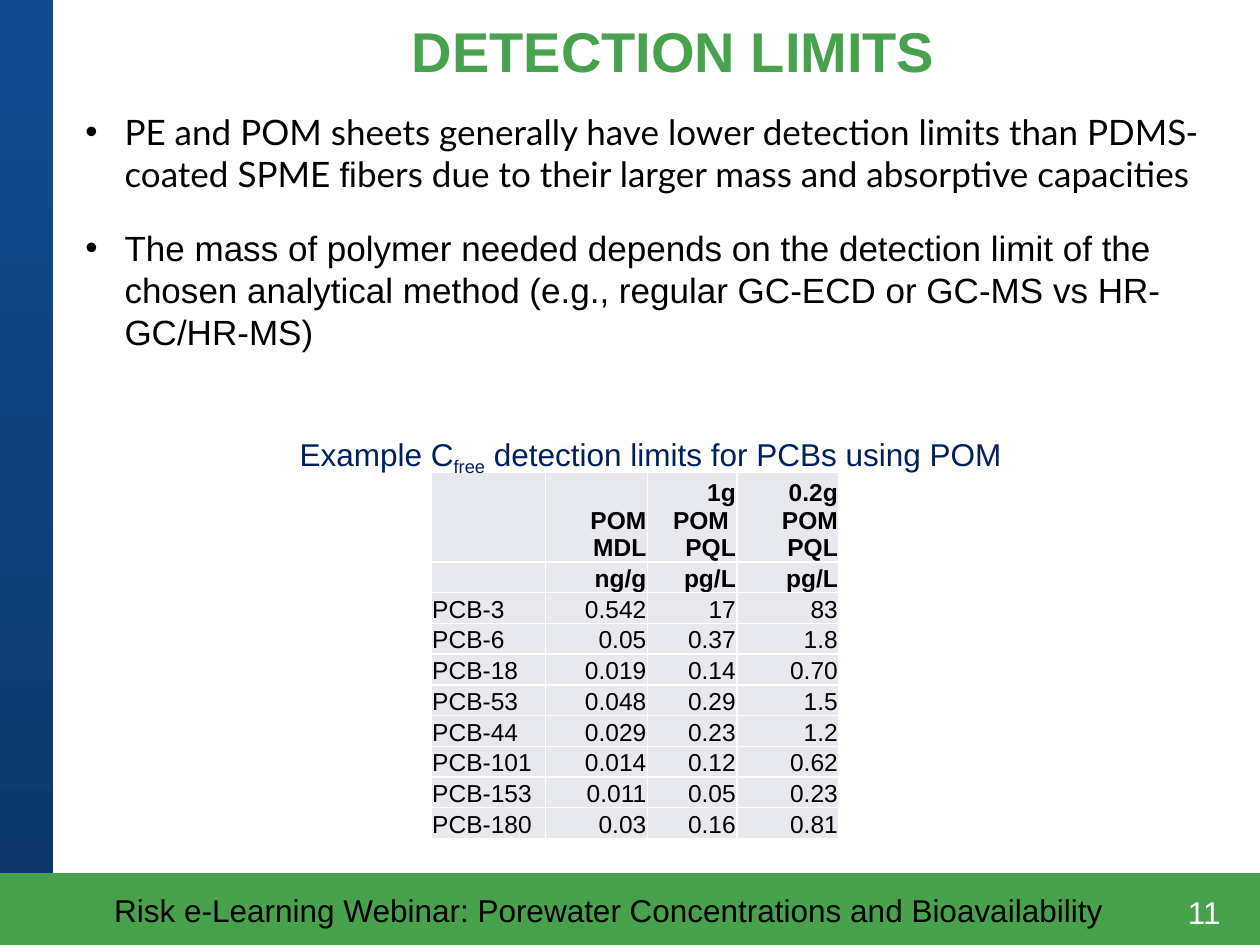
from dataclasses import dataclass

from lxml import etree
from pptx import Presentation
from pptx.dml.color import RGBColor
from pptx.enum.shapes import MSO_SHAPE
from pptx.enum.text import MSO_ANCHOR, PP_ALIGN
from pptx.oxml import parse_xml
from pptx.oxml.ns import nsdecls, qn
from pptx.util import Inches, Pt

RECT = MSO_SHAPE.RECTANGLE
LEFT, MID, RIGHT = PP_ALIGN.LEFT, PP_ALIGN.CENTER, PP_ALIGN.RIGHT
BOTTOM = MSO_ANCHOR.BOTTOM


@dataclass(frozen=True)
class Theme:
    green: str = "47A24B"
    top: str = "114B8E"
    base: str = "0D386A"
    navy: str = "002060"
    ink: str = "000000"
    white: str = "FFFFFF"
    cell: str = "E7E9EE"
    face: str = "Arial"
    title: int = 32
    body: int = 20
    label: int = 18
    grid: int = 14


class Deck:
    def __init__(self, theme, slide):
        self.theme, self.slide = theme, slide

    def bar(self, box, *hues):
        shape = self.slide.shapes.add_shape(RECT, *map(Inches, box))
        shape.shadow.inherit = False
        shape.line.fill.background()
        if len(hues) == 1:
            shape.fill.solid()
            shape.fill.fore_color.rgb = RGBColor.from_string(hues[0])
            return
        shape.fill.gradient()
        shape.fill.gradient_angle = 270
        for place, (stop, hue) in enumerate(zip(shape.fill.gradient_stops, hues)):
            stop.position = place
            stop.color.rgb = RGBColor.from_string(hue)

    def fill_para(self, para, runs, size, hue, bold=False):
        """Add runs; each is a text or a (text, format) pair."""
        for item in runs:
            text, extra = (item, {}) if isinstance(item, str) else item
            run = para.add_run()
            run.text = text
            look = {"name": self.theme.face, "size": Pt(size), "bold": bold}
            look.update(extra)
            shift = look.pop("shift", None)
            for key, value in look.items():
                setattr(run.font, key, value)
            run.font.color.rgb = RGBColor.from_string(hue)
            if shift:
                run._r.get_or_add_rPr().set("baseline", str(shift))

    def text(self, box, paras, size, hue, bold=False, align=LEFT, wrap=True,
             bullet=False, gap=0):
        frame = self.slide.shapes.add_textbox(*map(Inches, box)).text_frame
        frame.word_wrap = wrap
        for i, runs in enumerate(paras):
            para = frame.add_paragraph() if i else frame.paragraphs[0]
            para.alignment = align
            if i < len(paras) - 1:
                para.space_after = Pt(gap)
            if bullet:
                self.bullet(para)
            self.fill_para(para, runs, size, hue, bold)

    def bullet(self, para):
        props = para._p.get_or_add_pPr()
        props.set("marL", str(Inches(0.31)))
        props.set("indent", str(-Inches(0.31)))
        for tag, key, value in (("a:buFont", "typeface", self.theme.face),
                                ("a:buChar", "char", "•")):
            etree.SubElement(props, qn(tag)).set(key, value)

    def table(self, box, rows, widths, heights, heads):
        shape = self.slide.shapes.add_table(len(rows), len(widths), *map(Inches, box))
        table = shape.table
        for col, width in zip(table.columns, widths):
            col.width = Inches(width)
        for row, height in zip(table.rows, heights):
            row.height = Inches(height)
        for r, row in enumerate(rows):
            for c, text in enumerate(row):
                self.cell(table.cell(r, c), text, RIGHT if c else LEFT, r < heads)

    def cell(self, cell, text, align, bold):
        edge = Inches(0.01)
        look = {"margin_left": edge, "margin_right": edge, "margin_top": edge,
                "margin_bottom": 0, "vertical_anchor": BOTTOM}
        for key, value in look.items():
            setattr(cell, key, value)
        # Borders come before the fill in the cell properties
        props = cell._tc.get_or_add_tcPr()
        for side in "LRTB":
            props.append(parse_xml(
                f'<a:ln{side} {nsdecls("a")} w="{Pt(1)}"><a:solidFill>'
                f'<a:srgbClr val="{self.theme.white}"/></a:solidFill></a:ln{side}>'))
        cell.fill.solid()
        cell.fill.fore_color.rgb = RGBColor.from_string(self.theme.cell)
        frame = cell.text_frame
        for i, line in enumerate(text.split("\n")):
            para = frame.add_paragraph() if i else frame.paragraphs[0]
            para.alignment = align
            if line:
                self.fill_para(para, [line], self.theme.grid, self.theme.ink, bold)
            else:
                # Keep empty cells from stretching their row
                end = etree.SubElement(para._p, qn("a:endParaRPr"))
                end.set("sz", str(self.theme.grid * 100))


def main():
    show = Presentation()
    show.slide_width, show.slide_height = Inches(10), Inches(7.5)
    theme = Theme()
    deck = Deck(theme, show.slides.add_slide(show.slide_layouts[6]))

    # Side band and footer
    deck.bar((0, 0, 0.42, 7.5), theme.top, theme.base)
    deck.bar((0, 6.93, 10, 0.57), theme.green)
    deck.text((0.58, 7.02, 8.5, 0.4),
              [["Risk e-Learning Webinar: Porewater Concentrations and Bioavailability"]],
              theme.label, theme.ink, align=MID)
    deck.text((9.33, 7.04, 0.58, 0.38), [["11"]], theme.label, theme.white)

    # Title
    deck.text((3.17, 0.08, 4.36, 0.64), [["DETECTION LIMITS"]],
              theme.title, theme.green, bold=True, wrap=False)

    # Main points
    lato = {"name": "Lato"}
    points = [
        [("PE and POM sheets generally have lower detection limits than PDMS", lato),
         ("‐", {"name": "Roboto"}), ("coated SPME ", lato), "fi",
         ("bers due to their larger mass and absorptive capacities", lato)],
        ["The mass of polymer needed depends on the detection limit of the chosen "
         "analytical method (e.g., regular GC‐ECD or GC‐MS vs HR‐GC/HR‐MS)"],
    ]
    deck.text((0.58, 0.83, 9.25, 2.37), points, theme.body, theme.ink,
              bullet=True, gap=18)

    # Detection limit table
    rows = [
        ("", "POM MDL", "1g POM \nPQL", "0.2g POM PQL"),
        ("", "ng/g", "pg/L", "pg/L"),
        ("PCB-3", "0.542", "17", "83"),
        ("PCB-6", "0.05", "0.37", "1.8"),
        ("PCB-18", "0.019", "0.14", "0.70"),
        ("PCB-53", "0.048", "0.29", "1.5"),
        ("PCB-44", "0.029", "0.23", "1.2"),
        ("PCB-101", "0.014", "0.12", "0.62"),
        ("PCB-153", "0.011", "0.05", "0.23"),
        ("PCB-180", "0.03", "0.16", "0.81"),
    ]
    heights = [0.7] + [0.24] * (len(rows) - 1)
    deck.table((3.42, 3.75, 3.25, 2.9), rows, (0.91, 0.81, 0.71, 0.81), heights, heads=2)

    # Table caption
    deck.text((2.28, 3.4, 5.86, 0.4),
              [["Example C", ("free", {"shift": -25000}),
                " detection limits for PCBs using POM"]],
              theme.label, theme.navy, wrap=False)

    show.save("out.pptx")


if __name__ == "__main__":
    main()
